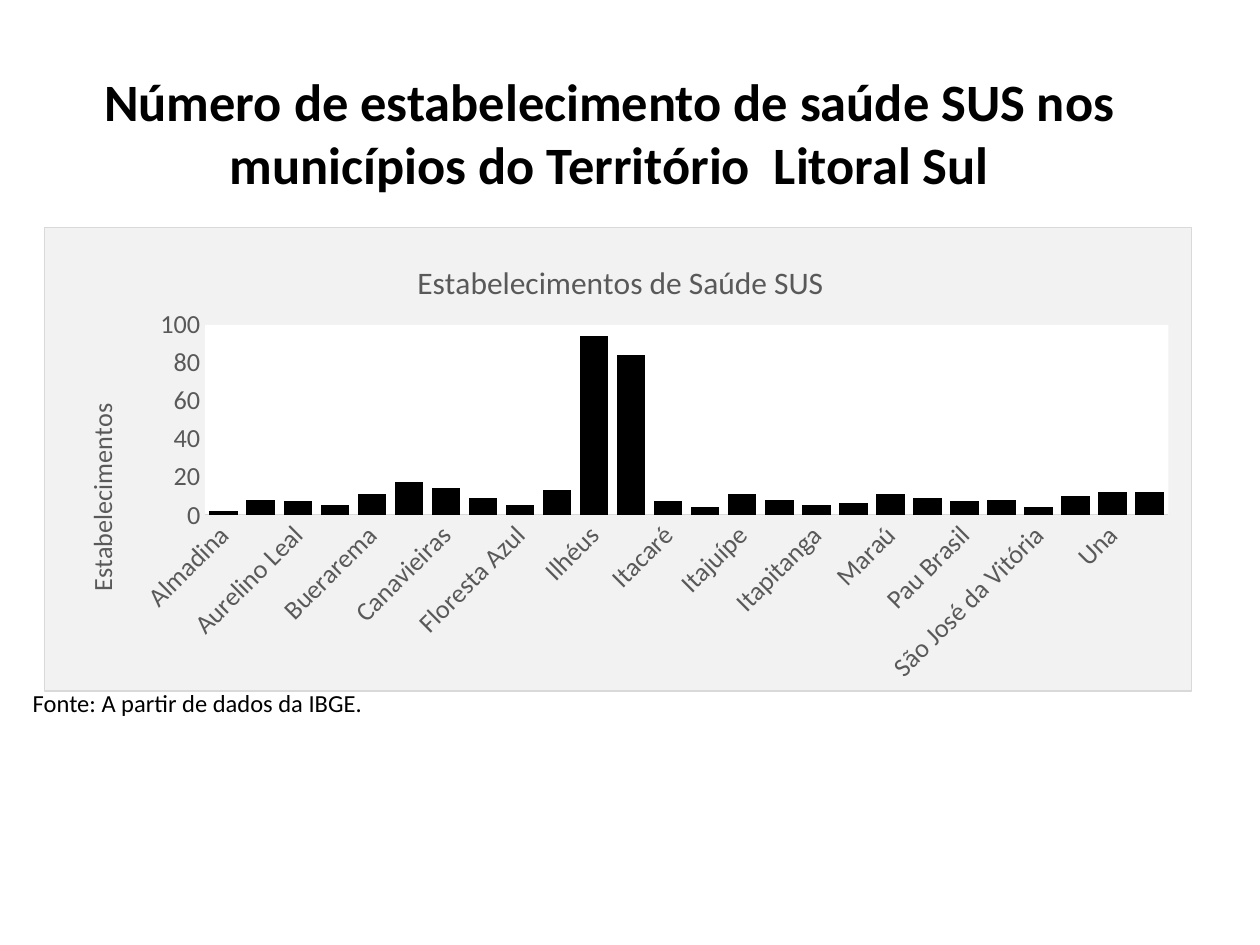
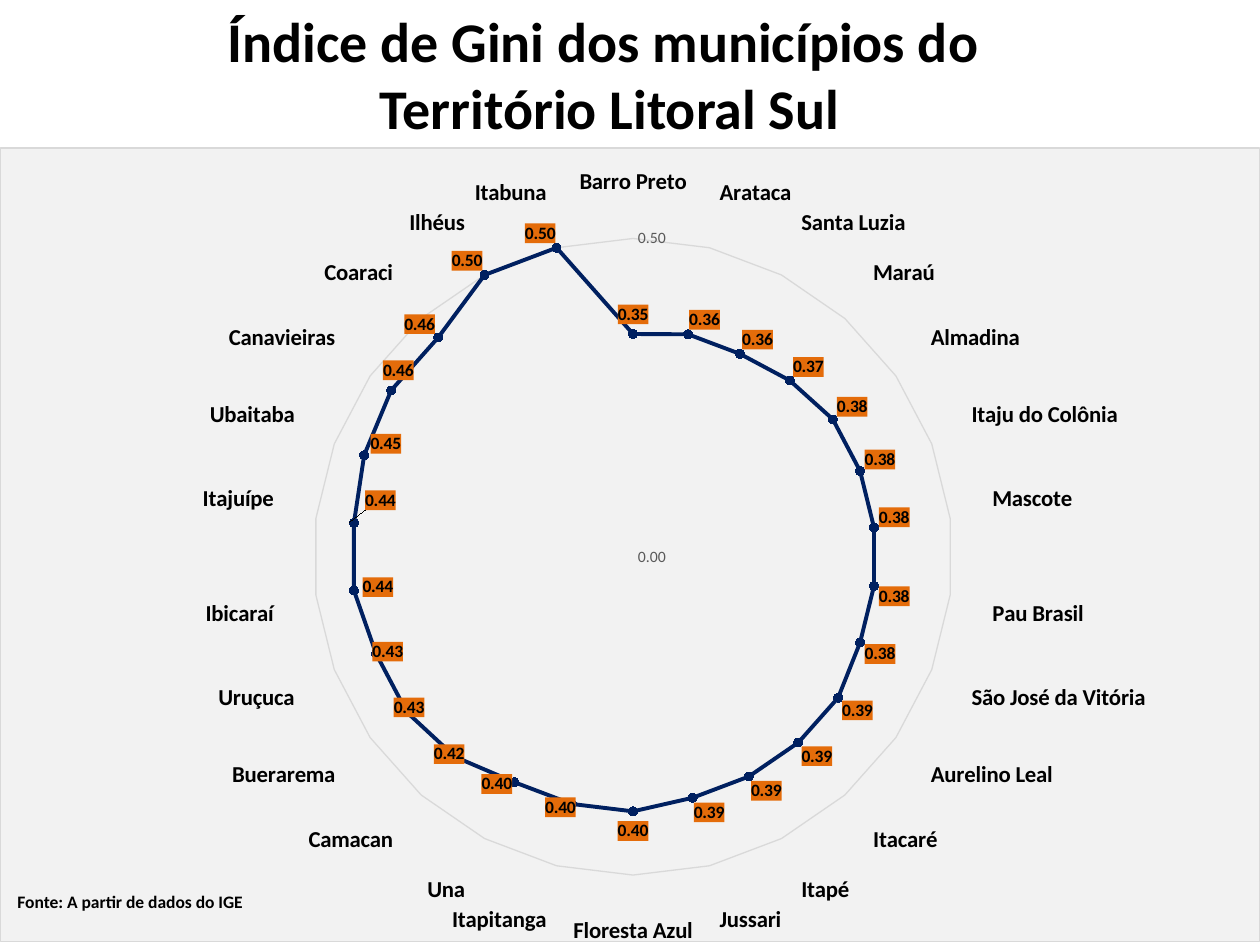
from copy import deepcopy

from pptx import Presentation
from pptx.chart.data import CategoryChartData
from pptx.dml.color import RGBColor
from pptx.enum.chart import XL_CHART_TYPE, XL_MARKER_STYLE, XL_TICK_MARK
from pptx.enum.text import MSO_ANCHOR, MSO_AUTO_SIZE, PP_ALIGN
from pptx.oxml import parse_xml
from pptx.oxml.ns import nsdecls, qn
from pptx.util import Inches, Pt

COLUMNS, RADAR = XL_CHART_TYPE.COLUMN_CLUSTERED, XL_CHART_TYPE.RADAR_MARKERS
CIRCLE, NO_TICK = XL_MARKER_STYLE.CIRCLE, XL_TICK_MARK.NONE
MIDDLE, TOP, NO_FIT = MSO_ANCHOR.MIDDLE, MSO_ANCHOR.TOP, MSO_AUTO_SIZE.NONE
CENTER, LEFT = PP_ALIGN.CENTER, PP_ALIGN.LEFT
TITLE_CONTENT, TITLE_ONLY = 1, 5

FONT = "Calibri"
BLACK, WHITE, GRAY = "000000", "FFFFFF", "595959"
PANEL, RULE, NAVY, ORANGE = "F2F2F2", "D9D9D9", "002060", "E46C0A"

HEALTH_UNITS = {
    "Almadina": 2, "Arataca": 8, "Aurelino Leal": 7, "Barro Preto": 5,
    "Buerarema": 11, "Camacan": 17, "Canavieiras": 14, "Coaraci": 9,
    "Floresta Azul": 5, "Ibicaraí": 13, "Ilhéus": 94, "Itabuna": 84,
    "Itacaré": 7, "Itaju do Colônia": 4, "Itajuípe": 11, "Itapé": 8,
    "Itapitanga": 5, "Jussari": 6, "Maraú": 11, "Mascote": 9,
    "Pau Brasil": 7, "Santa Luzia": 8, "São José da Vitória": 4,
    "Ubaitaba": 10, "Una": 12, "Uruçuca": 12,
}
GINI = {
    "Barro Preto": 0.35, "Arataca": 0.36, "Santa Luzia": 0.36, "Maraú": 0.37,
    "Almadina": 0.38, "Itaju do Colônia": 0.38, "Mascote": 0.38,
    "Pau Brasil": 0.38, "São José da Vitória": 0.38, "Aurelino Leal": 0.39,
    "Itacaré": 0.39, "Itapé": 0.39, "Jussari": 0.39, "Floresta Azul": 0.4,
    "Itapitanga": 0.4, "Una": 0.4, "Camacan": 0.42, "Buerarema": 0.43,
    "Uruçuca": 0.43, "Ibicaraí": 0.44, "Itajuípe": 0.44, "Ubaitaba": 0.45,
    "Canavieiras": 0.46, "Coaraci": 0.46, "Ilhéus": 0.5, "Itabuna": 0.5,
}
LABEL_SHIFTS = {
    "Itapitanga": (0.04, -0.09), "Una": (0, -0.1), "Camacan": (0.1, -0.13),
    "Buerarema": (0.17, -0.14), "Uruçuca": (0.25, -0.11),
    "Ibicaraí": (0.35, -0.11), "Itajuípe": (0.37, -0.1),
    "Ubaitaba": (0.33, 0), "Canavieiras": (0.21, -0.06),
}


def rgb(hex_color):
    """Turn a hex string into a colour."""
    return RGBColor.from_string(hex_color)


def style_font(font, size, color=BLACK, bold=False):
    """Apply the shared typeface with a size, colour and weight."""
    font.name, font.size, font.bold = FONT, Pt(size), bold
    font.color.rgb = rgb(color)


def write_text(shape, text, size, bold=False, align=LEFT, anchor=TOP):
    """Write one formatted paragraph into a shape and return it."""
    frame = shape.text_frame
    frame.text = text
    frame.word_wrap, frame.auto_size = True, NO_FIT
    frame.vertical_anchor = anchor
    paragraph = frame.paragraphs[0]
    paragraph.alignment = align
    for run in paragraph.runs:
        style_font(run.font, size, bold=bold)
    return paragraph


def place(shape, box):
    """Move a shape to a left, top, width, height box in inches."""
    shape.left, shape.top, shape.width, shape.height = map(Inches, box)


def add_title(slide, box, text, size):
    """Fill the title placeholder."""
    place(slide.shapes.title, box)
    write_text(slide.shapes.title, text, size, True, CENTER, MIDDLE)


def area_style(fill, border=None):
    """Build the fill and outline of a chart region."""
    line = f'<a:solidFill><a:srgbClr val="{border}"/></a:solidFill>' if border else "<a:noFill/>"
    return parse_xml(
        f'<c:spPr {nsdecls("c", "a")}><a:solidFill><a:srgbClr val="{fill}"/></a:solidFill>'
        f'<a:ln w="9525">{line}</a:ln></c:spPr>')


def layout(**settings):
    """Build a manual chart layout from its settings in schema order."""
    items = "".join(f'<c:{key} val="{value}"/>' for key, value in settings.items())
    return parse_xml(f'<c:layout {nsdecls("c")}><c:manualLayout>{items}</c:manualLayout></c:layout>')


def set_plot_box(plot_area, x, y, w, h):
    """Fix the inner plot rectangle as fractions of the chart."""
    for old in plot_area.findall(qn("c:layout")):
        plot_area.remove(old)
    plot_area.insert(0, layout(layoutTarget="inner", xMode="edge", yMode="edge", x=x, y=y, w=w, h=h))


def set_heading(heading, text, size, x, y):
    """Write a chart or axis heading at a fractional position."""
    heading.text_frame.text = text
    style_font(heading.text_frame.paragraphs[0].runs[0].font, size, GRAY)
    element = heading._element
    for old in element.findall(qn("c:layout")):
        element.remove(old)
    element.find(qn("c:tx")).addnext(layout(xMode="edge", yMode="edge", x=x, y=y))


def add_municipal_chart(slide, kind, box, values, size, number_format):
    """Add a one-series chart on the shared grey panel."""
    data = CategoryChartData(number_format=number_format)
    data.categories = list(values)
    data.add_series("Series 1", list(values.values()))
    chart = slide.shapes.add_chart(kind, *map(Inches, box), data).chart
    chart.has_legend = chart.has_title = False
    style_font(chart.font, size)
    chart._chartSpace.find(qn("c:chart")).addnext(area_style(PANEL, RULE))
    for axis in (chart.category_axis, chart.value_axis):
        axis.major_tick_mark = axis.minor_tick_mark = NO_TICK
        axis.has_major_gridlines = False
    outline = chart.category_axis.format.line
    outline.color.rgb, outline.width = rgb(RULE), Pt(0.75)
    chart.value_axis.format.line.fill.background()
    chart.value_axis.minimum_scale = 0
    return chart


def add_health_chart(slide, box):
    """Add the columns of health units by municipality."""
    chart = add_municipal_chart(slide, COLUMNS, box, HEALTH_UNITS, 15, "General")
    chart.has_title = True
    set_heading(chart.chart_title, "Estabelecimentos de Saúde SUS", 18, 0.32, 0.06)
    places, units = chart.category_axis, chart.value_axis
    for axis in (places, units):
        style_font(axis.tick_labels.font, 15, GRAY)
    places._element.find(qn("c:txPr")).find(qn("a:bodyPr")).set("rot", "-2700000")
    units.maximum_scale, units.major_unit = 100, 20
    units.has_title = True
    set_heading(units.axis_title, "Estabelecimentos", 15, 0.03, 0.37)
    plot = chart.plots[0]
    plot.gap_width, plot.overlap, plot.vary_by_categories = 30, -27, False
    bars = plot.series[0].format.fill
    bars.solid()
    bars.fore_color.rgb = rgb(BLACK)
    plot_area = chart._chartSpace.chart.plotArea
    set_plot_box(plot_area, 0.14, 0.21, 0.84, 0.41)
    plot_area.append(area_style(WHITE))


def add_gini_labels(series, box):
    """Show orange value labels and shift those on the left side."""
    labels = series.data_labels
    labels.show_value = True
    labels.number_format, labels.number_format_is_linked = "0.00", False
    style_font(labels.font, 10, bold=True)
    element = labels._element
    element.find(qn("c:txPr")).addprevious(area_style(ORANGE))
    shared = [part for part in element if part.tag != qn("c:showLeaderLines")]
    municipalities = list(GINI)
    for order, (municipality, (dx, dy)) in enumerate(LABEL_SHIFTS.items()):
        index = municipalities.index(municipality)
        label = parse_xml(f'<c:dLbl {nsdecls("c")}><c:idx val="{index}"/></c:dLbl>')
        label.append(layout(x=dx / box[2], y=dy / box[3]))
        label.extend(deepcopy(part) for part in shared)
        element.insert(order, label)


def add_gini_chart(slide, box):
    """Add the radar of Gini indices by municipality."""
    chart = add_municipal_chart(slide, RADAR, box, GINI, 10, "0.00")
    style_font(chart.category_axis.tick_labels.font, 13, bold=True)
    scale = chart.value_axis
    style_font(scale.tick_labels.font, 9, GRAY)
    scale.tick_labels.number_format = "0.00"
    scale.tick_labels.number_format_is_linked = False
    scale.maximum_scale = scale.major_unit = 0.5
    scale.has_major_gridlines = True
    rings = scale.major_gridlines.format.line
    rings.color.rgb, rings.width = rgb(RULE), Pt(0.75)
    chart.plots[0].vary_by_categories = False
    indices = chart.plots[0].series[0]
    indices.format.line.color.rgb, indices.format.line.width = rgb(NAVY), Pt(2.25)
    marker = indices.marker
    marker.style, marker.size = CIRCLE, 5
    marker.format.fill.solid()
    marker.format.fill.fore_color.rgb = rgb(NAVY)
    marker.format.line.color.rgb = rgb(NAVY)
    add_gini_labels(indices, box)
    set_plot_box(chart._chartSpace.chart.plotArea, 0.241, 0.114, 0.523, 0.802)


def build_health_slide(deck):
    """Build the slide on public health units."""
    slide = deck.slides.add_slide(deck.slide_layouts[TITLE_CONTENT])
    add_title(slide, (0.35, 0.3, 8.98, 1.5),
              "Número de estabelecimento de saúde SUS nos municípios do Território  Litoral Sul", 30)
    source = slide.placeholders[1]
    place(source, (0.16, 5.41, 9.31, 0.4))
    properties = write_text(source, "Fonte: A partir de dados da IBGE.", 14)._p.get_or_add_pPr()
    properties.set("marL", "0")
    properties.set("indent", "0")
    properties.append(parse_xml(f'<a:spcBef {nsdecls("a")}><a:spcPts val="0"/></a:spcBef>'))
    properties.append(parse_xml(f'<a:buNone {nsdecls("a")}/>'))
    add_health_chart(slide, (0.35, 1.8, 9.11, 3.69))


def build_gini_slide(deck):
    """Build the slide on the Gini index."""
    slide = deck.slides.add_slide(deck.slide_layouts[TITLE_ONLY])
    add_title(slide, (0.35, 0, 8.98, 1.17),
              "Índice de Gini dos municípios do \vTerritório Litoral Sul", 32)
    add_gini_chart(slide, (0, 1.17, 10, 6.33))
    source = slide.shapes.add_textbox(*map(Inches, (0.04, 7.02, 3.74, 0.27)))
    write_text(source, "Fonte: A partir de dados do IGE", 10, True)


def main():
    """Build and save the deck."""
    deck = Presentation()
    deck.slide_width, deck.slide_height = Inches(10), Inches(7.5)
    build_health_slide(deck)
    build_gini_slide(deck)
    deck.save("out.pptx")


if __name__ == "__main__":
    main()
